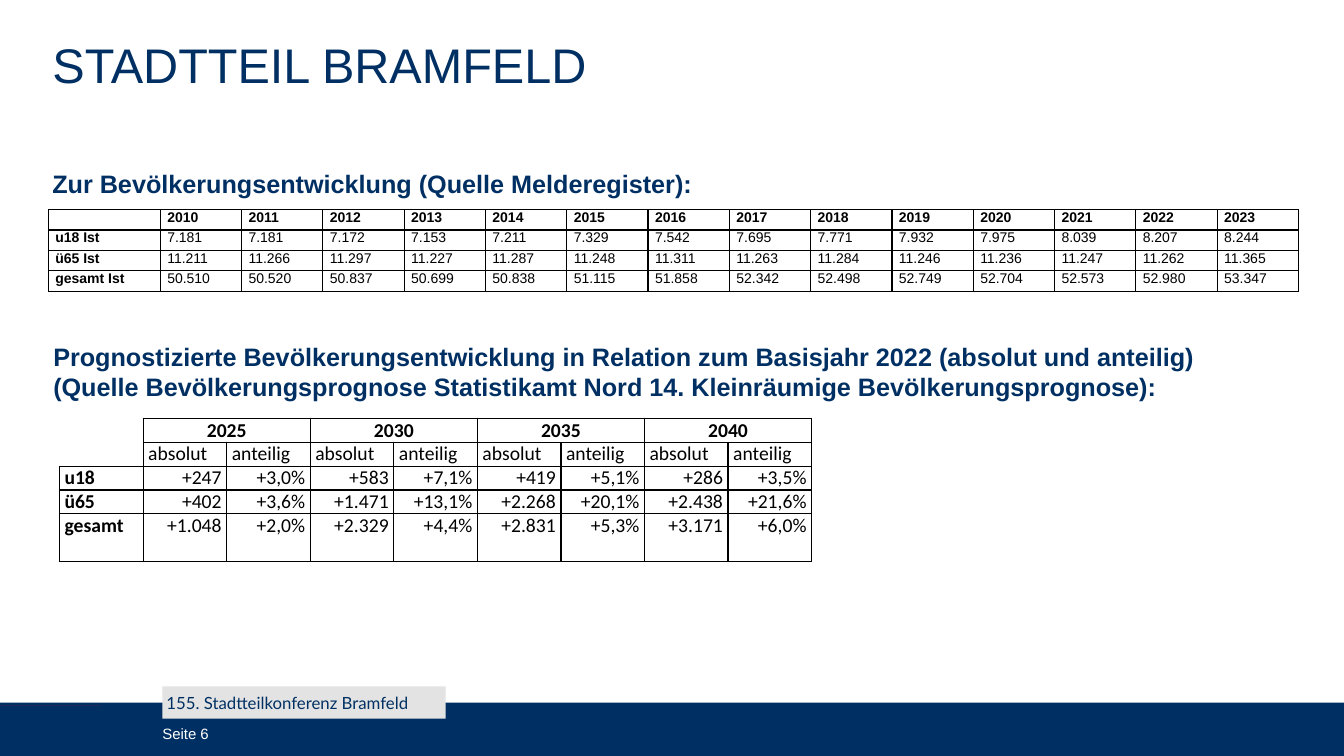
import dataclasses

import lxml.etree
import pptx
import pptx.dml.color
import pptx.enum.shapes
import pptx.enum.text
import pptx.oxml.ns
import pptx.util

Inches = pptx.util.Inches
Align = pptx.enum.text.PP_ALIGN
Anchor = pptx.enum.text.MSO_ANCHOR


@dataclasses.dataclass(frozen=True)
class Theme:
    """Colours, fonts and type sizes of the slide."""
    navy: str = "003063"
    red: str = "E10019"
    grey: str = "E3E3E3"
    white: str = "FFFFFF"
    black: str = "000000"
    sans: str = "Arial"
    label: str = "Lato"
    figures: str = "Calibri"
    title_size: float = 34.7
    heading_size: float = 18
    forecast_size: float = 14
    label_size: float = 12
    number_size: float = 10.7
    history_size: float = 10
    border_width: float = 1


THEME = Theme()

YEARS = [str(year) for year in range(2010, 2024)]
HISTORY = [
    ["", *YEARS],
    ["u18 Ist", *"7.181 7.181 7.172 7.153 7.211 7.329 7.542 7.695 7.771 7.932 7.975 8.039 8.207 8.244".split()],
    ["ü65 Ist", *"11.211 11.266 11.297 11.227 11.287 11.248 11.311 11.263 11.284 11.246 11.236 11.247 11.262 11.365".split()],
    ["gesamt Ist", *"50.510 50.520 50.837 50.699 50.838 51.115 51.858 52.342 52.498 52.749 52.704 52.573 52.980 53.347".split()],
]
FORECAST = [
    ["", "2025", "", "2030", "", "2035", "", "2040", ""],
    ["", *["absolut", "anteilig"] * 4],
    ["u18", *"+247 +3,0% +583 +7,1% +419 +5,1% +286 +3,5%".split()],
    ["ü65", *"+402 +3,6% +1.471 +13,1% +2.268 +20,1% +2.438 +21,6%".split()],
    ["gesamt", *"+1.048 +2,0% +2.329 +4,4% +2.831 +5,3% +3.171 +6,0%".split()],
    [""] * 9,
]


def colour(code):
    """Turn a hex code into a colour."""
    return pptx.dml.color.RGBColor.from_string(code)


def write(para, words, size, family, ink, bold=False):
    """Add one formatted run to a paragraph."""
    span = para.add_run()
    span.text = words
    span.font.size = pptx.util.Pt(size)
    span.font.name = family
    span.font.bold = bold
    span.font.color.rgb = colour(ink)


def prepare_frame(frame, inset, anchor):
    """Set wrapping, equal insets and the anchor of a text frame."""
    frame.word_wrap = True
    frame.auto_size = pptx.enum.text.MSO_AUTO_SIZE.NONE
    frame.vertical_anchor = anchor
    frame.margin_left = frame.margin_right = Inches(inset)
    frame.margin_top = frame.margin_bottom = Inches(min(inset, 0.05))


def paint(shape, fill):
    """Give a shape a plain fill without line or shadow."""
    shape.shadow.inherit = False
    shape.fill.solid()
    shape.fill.fore_color.rgb = colour(fill)
    shape.line.fill.background()


def add_bar(page, left, top, width, height, fill):
    """Add a plain filled rectangle."""
    bar = page.shapes.add_shape(
        pptx.enum.shapes.MSO_SHAPE.RECTANGLE, Inches(left), Inches(top), Inches(width), Inches(height))
    paint(bar, fill)
    return bar


def add_tab(page, left, top, width, height):
    """Add the slanted red tab with its rounded lower corner."""
    right, bottom = left + width, top + height
    corner = [(right - 0.23, bottom - 0.05), (right - 0.25, bottom - 0.02),
              (right - 0.28, bottom), (right - 0.33, bottom)]
    curve = []
    for step in range(9):
        t = step / 8
        weights = [(1 - t) ** 3, 3 * t * (1 - t) ** 2, 3 * t ** 2 * (1 - t), t ** 3]
        curve.append(tuple(sum(w * point[axis] for w, point in zip(weights, corner)) for axis in (0, 1)))
    builder = page.shapes.build_freeform(left, top, scale=Inches(1))
    builder.add_line_segments([(right, top), *curve, (left, bottom)], close=True)
    paint(builder.convert_to_shape(), THEME.red)


def add_footer(page, left, top, width, height):
    """Add the footer band, its tab, the event label and the page number."""
    add_bar(page, left, top, width, height, THEME.navy)
    add_tab(page, left, top - 0.2, 1.38, 0.39)
    label = add_bar(page, left + 1.61, top - 0.16, 2.81, 0.32, THEME.grey)
    prepare_frame(label.text_frame, 0.04, Anchor.MIDDLE)
    para = label.text_frame.paragraphs[0]
    para.alignment = Align.LEFT
    write(para, "155. Stadtteilkonferenz Bramfeld", THEME.label_size, THEME.label, THEME.navy)
    number = page.shapes.add_textbox(Inches(left + 1.61), Inches(top + 0.22), Inches(1.05), Inches(0.18))
    prepare_frame(number.text_frame, 0, Anchor.MIDDLE)
    write(number.text_frame.paragraphs[0], "Seite 6", THEME.number_size, THEME.sans, THEME.white)


def add_title(page, left, top, width, height):
    """Place and fill the title placeholder."""
    title = page.shapes.title
    title.left, title.top, title.width, title.height = map(Inches, (left, top, width, height))
    prepare_frame(title.text_frame, 0, Anchor.TOP)
    para = title.text_frame.paragraphs[0]
    para.alignment = Align.LEFT
    para.line_spacing = 0.9
    write(para, "STADTTEIL BRAMFELD", THEME.title_size, THEME.sans, THEME.navy)


def add_heading(page, left, top, width, height, lines):
    """Add a bold section heading with one paragraph per line."""
    box = page.shapes.add_textbox(Inches(left), Inches(top), Inches(width), Inches(height))
    prepare_frame(box.text_frame, 0.1, Anchor.MIDDLE)
    for index, line in enumerate(lines):
        para = box.text_frame.add_paragraph() if index else box.text_frame.paragraphs[0]
        write(para, line, THEME.heading_size, THEME.sans, THEME.navy, True)


def set_borders(cell, sides):
    """Draw the named cell sides in black and hide the others."""
    properties = cell._tc.get_or_add_tcPr()
    for index, side in enumerate("LRTB"):
        line = lxml.etree.Element(pptx.oxml.ns.qn("a:ln" + side), w=str(pptx.util.Pt(THEME.border_width)))
        if side in sides:
            fill = lxml.etree.SubElement(line, pptx.oxml.ns.qn("a:solidFill"))
            lxml.etree.SubElement(fill, pptx.oxml.ns.qn("a:srgbClr"), val=THEME.black)
        else:
            lxml.etree.SubElement(line, pptx.oxml.ns.qn("a:noFill"))
        properties.insert(index, line)


def fill_cell(cell, words, size, family, bold, inset, anchor, align, sides):
    """Write and format one table cell."""
    cell.fill.background()
    cell.margin_left = cell.margin_right = Inches(inset)
    cell.margin_top = cell.margin_bottom = 0
    cell.vertical_anchor = anchor
    para = cell.text_frame.paragraphs[0]
    para.alignment = align
    if words:
        write(para, words, size, family, THEME.black, bold)
    para._p.get_or_add_endParaRPr().set("sz", str(size * 100))
    set_borders(cell, sides)


def add_grid(page, left, top, width, height, rows, first_width):
    """Add an unstyled table with equal rows and equal value columns."""
    count = len(rows[0])
    table = page.shapes.add_table(
        len(rows), count, Inches(left), Inches(top), Inches(width), Inches(height)).table
    table.first_row = table.horz_banding = False
    for index, column in enumerate(table.columns):
        column.width = Inches((width - first_width) / (count - 1) if index else first_width)
    for row in table.rows:
        row.height = Inches(height / len(rows))
    return table


def add_history(page, left, top, width, height):
    """Add the table of registered population by year."""
    table = add_grid(page, left, top, width, height, HISTORY, 1.11)
    for r, row in enumerate(HISTORY):
        for c, words in enumerate(row):
            fill_cell(table.cell(r, c), words, THEME.history_size, THEME.sans, r == 0 or c == 0,
                      0.07, Anchor.TOP, Align.LEFT, "LRTB")


def add_forecast(page, left, top, width, height):
    """Add the forecast table with paired year columns."""
    table = add_grid(page, left, top, width, height, FORECAST, 0.83)
    sides_by_row = {4: "LRT", 5: "LRB"}
    for r, row in enumerate(FORECAST):
        for c, words in enumerate(row):
            sides = sides_by_row.get(r, "LRTB")
            if c == 0 and r < 2:
                sides = "RB" if r else "R"
            align = Align.CENTER if r == 0 else Align.RIGHT if r > 1 and c else Align.LEFT
            fill_cell(table.cell(r, c), words, THEME.forecast_size, THEME.figures, r == 0 or c == 0,
                      0.05, Anchor.BOTTOM, align, sides)
    for c in range(1, len(FORECAST[0]), 2):
        table.cell(0, c).merge(table.cell(0, c + 1))


def main():
    """Build the slide and save the deck."""
    deck = pptx.Presentation()
    deck.slide_width, deck.slide_height = Inches(13.33), Inches(7.5)
    page = deck.slides.add_slide(deck.slide_layouts.get_by_name("Title Only"))
    add_footer(page, 0, 6.97, 13.33, 0.53)
    add_title(page, 0.52, 0.41, 12.44, 0.53)
    add_history(page, 0.48, 2.08, 12.4, 0.81)
    add_heading(page, 0.42, 1.62, 6.61, 0.4, ["Zur Bevölkerungsentwicklung (Quelle Melderegister):"])
    add_forecast(page, 0.59, 4.15, 7.46, 1.4)
    add_heading(page, 0.43, 3.33, 12.09, 0.71, [
        "Prognostizierte Bevölkerungsentwicklung in Relation zum Basisjahr 2022 (absolut und anteilig)",
        "(Quelle Bevölkerungsprognose Statistikamt Nord 14. Kleinräumige Bevölkerungsprognose):"])
    deck.save("out.pptx")


if __name__ == "__main__":
    main()
